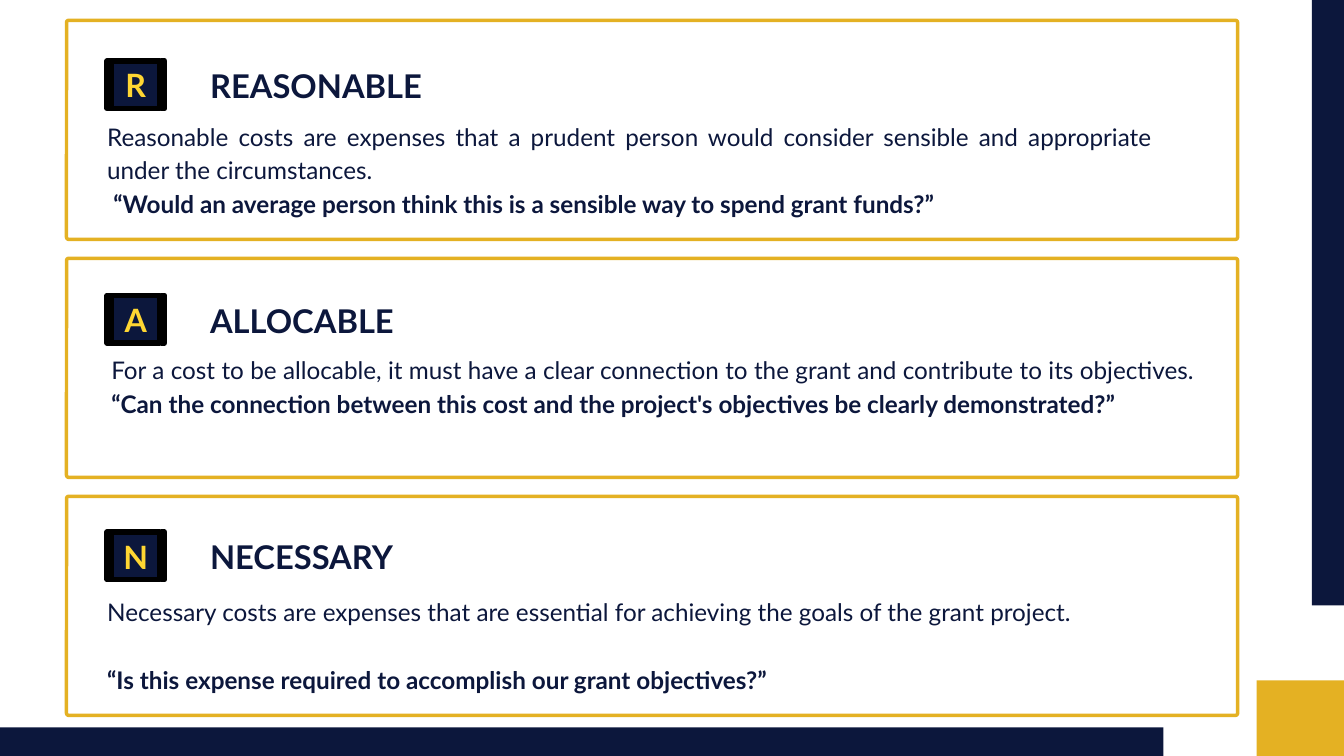
from pptx import Presentation
from pptx import util as u
from pptx.dml.color import RGBColor
from pptx.enum import shapes, text

PX = 9525
FONT = "Lato"
NAVY, GOLD, YELLOW, BLACK = "0C173C", "E4B123", "FFD632", "000000"
LEFT, MID, JUST = text.PP_ALIGN.LEFT, text.PP_ALIGN.CENTER, text.PP_ALIGN.JUSTIFY
RECT = shapes.MSO_SHAPE.RECTANGLE
ROUND = shapes.MSO_SHAPE.ROUNDED_RECTANGLE

CARDS = [
    dict(name="REASONABLE", top=87, width=731, body=(153, 167, 1494, 144), lines=[
        (JUST, 0, [("Reasonable costs are expenses that a prudent person would consider "
                    "sensible and appropriate under the circumstances.", False)]),
        (JUST, 0, [(" ", False), ("“Would an average person think this is a sensible "
                                  "way to spend grant funds?”", True)])]),
    dict(name="ALLOCABLE", top=422, width=853, body=(159, 501, 1549, 192), lines=[
        (JUST, 0, [("For a cost to be allocable, it must have a clear connection to the "
                    "grant and contribute to its objectives. ", False)]),
        (LEFT, 0, [("“Can the connection between this cost and the project's "
                    "objectives be clearly demonstrated?”", True)])]),
    dict(name="NECESSARY", top=760, width=853, body=(153, 847, 1494, 144), lines=[
        (JUST, 0, [("Necessary costs are expenses that are essential for achieving the "
                    "goals of the grant project.", False)]),
        (JUST, 36.4, [("“Is this expense required to accomplish our grant "
                       "objectives?”", True)])]),
]


def hue(code):
    return RGBColor.from_string(code)


def emu(box):
    return [n * PX for n in box]


def block(slide, box, fill=None, line=None, weight=0, kind=RECT):
    shape = slide.shapes.add_shape(kind, *emu(box))
    shape.shadow.inherit = False
    if fill:
        shape.fill.solid()
        shape.fill.fore_color.rgb = hue(fill)
    else:
        shape.fill.background()
    if line:
        shape.line.color.rgb = hue(line)
        shape.line.width = u.Pt(weight)
    else:
        shape.line.fill.background()
    return shape


def write(slide, box, lines, size, color, pitch, holder=None):
    shape = holder or slide.shapes.add_textbox(*emu(box))
    shape.left, shape.top, shape.width, shape.height = emu(box)
    frame = shape.text_frame
    frame.word_wrap = True
    frame.auto_size = text.MSO_AUTO_SIZE.NONE
    frame.vertical_anchor = text.MSO_ANCHOR.TOP
    frame.margin_left = frame.margin_top = frame.margin_right = frame.margin_bottom = 0
    for i, (align, gap, runs) in enumerate(lines):
        para = frame.add_paragraph() if i else frame.paragraphs[0]
        para.alignment = align
        para.line_spacing = u.Pt(pitch)
        para.space_before = u.Pt(gap)
        for words, bold in runs:
            run = para.add_run()
            run.text = words
            font = run.font
            font.name, font.size, font.bold = FONT, u.Pt(size), bold
            font.color.rgb = hue(color)


def badge(slide, letter, top):
    for left, width in ((159, 69), (153, 4), (231, 4)):
        block(slide, (left, top, width, 68), NAVY, BLACK, 6)
    write(slide, (165, top - 2, 58, 63), [(MID, 0, [(letter, True)])], 34.4, YELLOW, 48.1)


def card(slide, row, data, holder):
    frame = block(slide, (95, 29 + 340 * row, 1673, 313), None, GOLD, 3.75, ROUND)
    frame.adjustments[0] = 0.01
    name, top = data["name"], data["top"]
    badge(slide, name[0], top)
    write(slide, (300, top - 2, data["width"], 63), [(LEFT, 0, [(name, True)])],
          35, NAVY, 49, holder)
    write(slide, data["body"], data["lines"], 26, NAVY, 36.4)


def main():
    deck = Presentation()
    deck.slide_width, deck.slide_height = emu((1920, 1080))
    slide = deck.slides.add_slide(deck.slide_layouts[5])
    block(slide, (-37, 1039, 1699, 124), NAVY)
    block(slide, (1874, -53, 129, 918), NAVY)
    block(slide, (1795, 972, 167, 231), GOLD)
    for row, data in enumerate(CARDS):
        card(slide, row, data, None if row else slide.shapes.title)
    deck.save("out.pptx")


if __name__ == "__main__":
    main()
